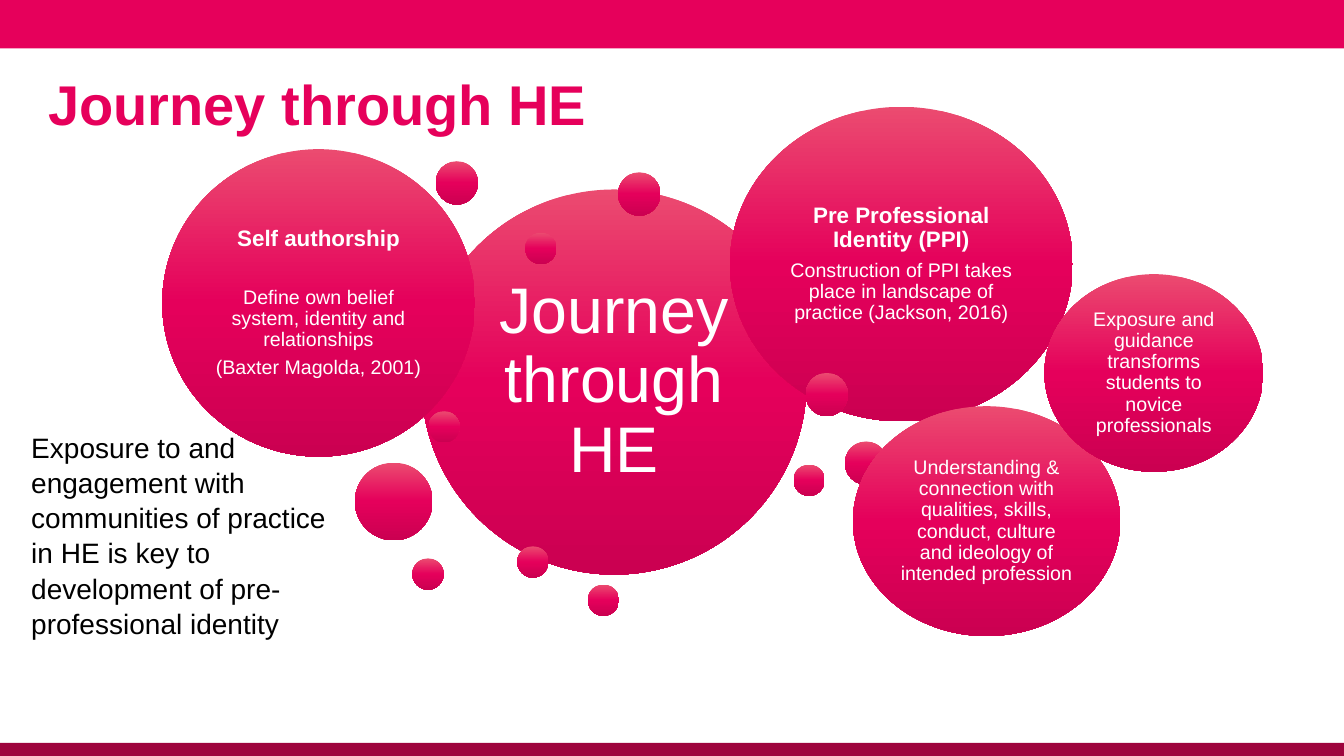
from copy import deepcopy

from pptx import Presentation
from pptx.dml.color import RGBColor
from pptx.enum.shapes import MSO_SHAPE
from pptx.enum.text import MSO_ANCHOR, MSO_AUTO_SIZE, PP_ALIGN
from pptx.util import Inches, Pt

PINK = RGBColor(0xE6, 0x00, 0x5B)
DARK_PINK = RGBColor(0x9E, 0x04, 0x3D)
WHITE = RGBColor(0xFF, 0xFF, 0xFF)
BLACK = RGBColor(0x00, 0x00, 0x00)
GRADIENT = [
    (0, RGBColor(0xEB, 0x4B, 0x70)),
    (0.5, RGBColor(0xE5, 0x00, 0x5B)),
    (1, RGBColor(0xCB, 0x00, 0x51)),
]
FONT = "Arial"
TITLE = "Journey through HE"
SUMMARY = ("Exposure to and engagement with communities of practice in HE "
           "is key to development of pre-professional identity")
BARS = [(0, 0.48, PINK), (7.37, 0.13, DARK_PINK)]

SMALL, MEDIUM, LARGE = (0.31, 0.31), (0.42, 0.43), (0.77, 0.77)
SPACE_AFTER = 0.35
HEADING_GAP = 20

# Each bubble: position, size, inset, paragraphs of (text, points, bold, extra gap)
BUBBLES = [
    ((4.18, 1.88), (3.82, 3.82), 0.19, [("Journey through HE", 46, False, 0)]),
    ((6.13, 1.71), MEDIUM, 0, []),
    ((5.13, 5.42), SMALL, 0, []),
    ((8.38, 4.38), MEDIUM, 0, []),
    ((5.21, 2.31), SMALL, 0, []),
    ((4.25, 4.08), SMALL, 0, []),
    ((1.61, 1.48), (3.1, 3.05), 0.07, [
        ("Self authorship", 16, True, HEADING_GAP),
        ("Define own belief system, identity and relationships", 14, False, 0),
        ("(Baxter Magolda, 2001)", 14, False, 0),
    ]),
    ((4.32, 1.6), MEDIUM, 0, []),
    ((3.52, 4.59), LARGE, 0, []),
    ((7.24, 1.06), (3.4, 3.12), 0.07, [
        ("Pre Professional Identity (PPI)", 16, True, 0),
        ("Construction of PPI takes place in landscape of practice (Jackson, 2016)",
         14, False, 0),
    ]),
    ((7.99, 3.7), MEDIUM, 0, []),
    ((4.09, 5.54), SMALL, 0, []),
    ((5.83, 5.8), SMALL, 0, []),
    ((8.46, 4.03), (2.65, 2.28), 0.06, [
        ("Understanding & connection with qualities, skills, conduct, culture "
         "and ideology of intended profession", 14, False, 0),
    ]),
    ((7.87, 4.61), SMALL, 0, []),
    ((10.36, 2.72), (2.17, 1.96), 0.06, [
        ("Exposure and guidance transforms students to novice professionals",
         14, False, 0),
    ]),
]


def set_frame(frame, anchor, left, top, right, bottom):
    """Set wrapping, anchor and margins of a text frame."""
    frame.word_wrap = True
    frame.auto_size = MSO_AUTO_SIZE.NONE
    frame.vertical_anchor = anchor
    frame.margin_left, frame.margin_top = Inches(left), Inches(top)
    frame.margin_right, frame.margin_bottom = Inches(right), Inches(bottom)


def style(para, size, color, bold=False):
    """Format every run of a paragraph."""
    for span in para.runs:
        span.font.name = FONT
        span.font.size = Pt(size)
        span.font.bold = bold
        span.font.color.rgb = color


def add_plain_shape(page, kind, left, top, width, height):
    """Add a shape without shadow or outline."""
    shape = page.shapes.add_shape(
        kind, Inches(left), Inches(top), Inches(width), Inches(height))
    shape.shadow.inherit = False
    shape.line.fill.background()
    return shape


def fill_gradient(shape):
    """Fill a shape with the pink gradient from top to bottom."""
    shape.fill.gradient()
    shape.fill.gradient_angle = 270
    stop_list = shape.fill._fill._gradFill.gsLst
    stop_list.append(deepcopy(stop_list[0]))
    for stop, (position, color) in zip(shape.fill.gradient_stops, GRADIENT):
        stop.position = position
        stop.color.rgb = color


def add_bubble(page, position, size, inset, paragraphs):
    """Add a gradient bubble with centred text."""
    bubble = add_plain_shape(page, MSO_SHAPE.OVAL, *position, *size)
    fill_gradient(bubble)
    if not paragraphs:
        return
    frame = bubble.text_frame
    set_frame(frame, MSO_ANCHOR.MIDDLE, inset, inset, inset, inset)
    for index, (text, points, bold, gap) in enumerate(paragraphs):
        para = frame.add_paragraph() if index else frame.paragraphs[0]
        para.text = text
        para.alignment = PP_ALIGN.CENTER
        para.line_spacing = 0.9
        para.space_after = Pt(round(points * SPACE_AFTER + gap, 1))
        style(para, points, WHITE, bold)


def main():
    """Build the slide and save it."""
    deck = Presentation()
    deck.slide_width, deck.slide_height = Inches(13.33), Inches(7.5)
    page = deck.slides.add_slide(deck.slide_layouts[5])

    for top, height, color in BARS:
        bar = add_plain_shape(page, MSO_SHAPE.RECTANGLE, 0, top, 13.33, height)
        bar.fill.solid()
        bar.fill.fore_color.rgb = color

    title = page.shapes.title
    title.left, title.top = Inches(0.48), Inches(0.47)
    title.width, title.height = Inches(12.36), Inches(1.1)
    title.text_frame.text = TITLE
    set_frame(title.text_frame, MSO_ANCHOR.MIDDLE, 0, 0.05, 0.1, 0.05)
    title.text_frame.paragraphs[0].alignment = PP_ALIGN.LEFT
    style(title.text_frame.paragraphs[0], 40, PINK, True)

    for bubble in BUBBLES:
        add_bubble(page, *bubble)

    box = page.shapes.add_textbox(Inches(0.31), Inches(4.33), Inches(3), Inches(2.02))
    box.text_frame.text = SUMMARY
    set_frame(box.text_frame, MSO_ANCHOR.BOTTOM, 0, 0, 0, 0)
    box.text_frame.paragraphs[0].line_spacing = 1.05
    style(box.text_frame.paragraphs[0], 20, BLACK)

    deck.save("out.pptx")


if __name__ == "__main__":
    main()
